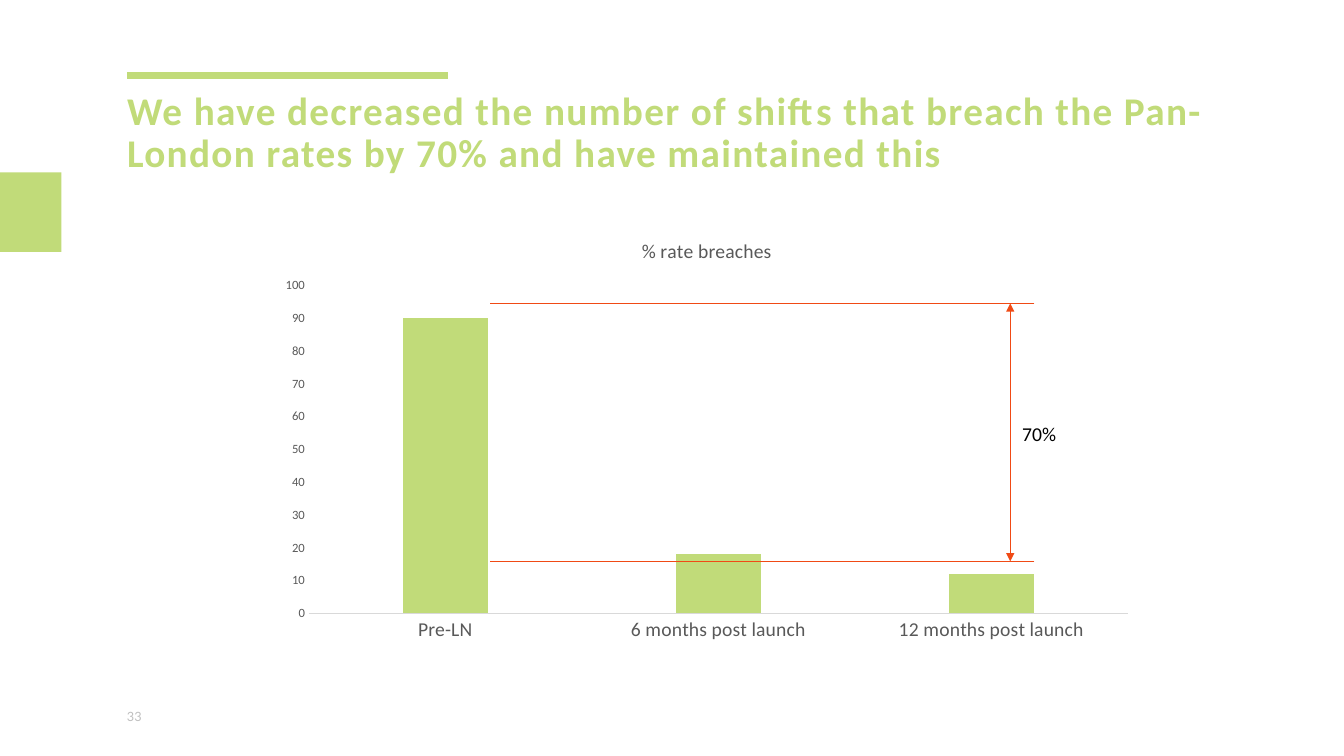
from lxml import etree
from pptx import Presentation
from pptx.chart.data import CategoryChartData
from pptx.dml.color import RGBColor
from pptx.enum.chart import XL_CHART_TYPE, XL_TICK_MARK
from pptx.enum.shapes import MSO_CONNECTOR, MSO_SHAPE
from pptx.enum.text import MSO_AUTO_SIZE
from pptx.oxml.ns import qn
from pptx.util import Inches, Pt

COLUMNS = XL_CHART_TYPE.COLUMN_CLUSTERED
NO_TICKS = XL_TICK_MARK.NONE
STRAIGHT = MSO_CONNECTOR.STRAIGHT
RECTANGLE = MSO_SHAPE.RECTANGLE
GROW = MSO_AUTO_SIZE.SHAPE_TO_FIT_TEXT
FIXED = MSO_AUTO_SIZE.NONE

GREEN, ORANGE, GREY = "C1DB79", "F04A15", "595959"
BREACHES = {"Pre-LN": 90, "6 months post launch": 18, "12 months post launch": 12}
MEASURE = "% rate breaches"


def color(value):
    """Turn a hex string into a colour."""
    return RGBColor.from_string(value)


def set_font(font, size, ink, face="Calibri", bold=False):
    """Apply size, colour, face and weight to a font."""
    formats = {"size": Pt(size), "name": face, "bold": bold}
    for key, value in formats.items():
        setattr(font, key, value)
    font.color.rgb = color(ink)


def add_text(slide, box, words, size, ink, face="Calibri", bold=False,
             wrap=True, auto_size=GROW, left=0.1, right=0.1):
    """Place one paragraph of text in a box and return it."""
    frame = slide.shapes.add_textbox(*map(Inches, box)).text_frame
    formats = {"word_wrap": wrap, "auto_size": auto_size,
               "margin_left": Inches(left), "margin_right": Inches(right),
               "margin_top": Inches(0.05), "margin_bottom": Inches(0.05)}
    for key, value in formats.items():
        setattr(frame, key, value)
    paragraph = frame.paragraphs[0]
    run = paragraph.add_run()
    run.text = words
    set_font(run.font, size, ink, face, bold)
    return paragraph


def add_line(slide, start, end, ink, width, arrows=False):
    """Draw a straight line, with arrowheads at both ends if asked."""
    line = slide.shapes.add_connector(STRAIGHT, *map(Inches, (*start, *end)))
    line.line.color.rgb = color(ink)
    line.line.width = Pt(width)
    properties = line._element.spPr
    if arrows:
        outline = properties.find(qn("a:ln"))
        for tip in ("a:headEnd", "a:tailEnd"):
            etree.SubElement(outline, qn(tip), type="triangle")
    etree.SubElement(properties, qn("a:effectLst"))


def add_frame(slide, left):
    """Draw the page number, the rule above the title and the side tab."""
    add_text(slide, (left, 6.98, 3.3, 0.24), "33", 9.1, "BFBFBF", "Lato",
             auto_size=FIXED, left=0)
    add_line(slide, (left, 0.75), (left + 3.18, 0.75), GREEN, 5)
    tab = slide.shapes.add_shape(RECTANGLE, *map(Inches, (0, 1.71, 0.61, 0.79)))
    tab.shadow.inherit = False
    tab.fill.solid()
    tab.fill.fore_color.rgb = color(GREEN)
    tab.line.fill.background()


def add_headline(slide, box):
    """Write the letter-spaced headline."""
    headline = add_text(
        slide, box,
        "We have decreased the number of shifts that breach the "
        "Pan-London rates by 70% and have maintained this",
        28, GREEN, bold=True, left=0, right=0)
    headline.line_spacing = 0.9
    headline.runs[0].font._element.set("spc", "100")


def add_breach_chart(slide, box):
    """Chart the rate breaches before and after launch."""
    data = CategoryChartData()
    data.categories = list(BREACHES)
    data.add_series(MEASURE, list(BREACHES.values()))
    chart = slide.shapes.add_chart(COLUMNS, *map(Inches, box), data).chart
    set_font(chart.font, 10, "000000")
    chart.has_legend = False
    chart.has_title = True
    heading = chart.chart_title.text_frame
    heading.text = MEASURE
    set_font(heading.paragraphs[0].runs[0].font, 14, GREY)
    chart.chart_title.include_in_layout = False

    periods, rates = chart.category_axis, chart.value_axis
    for axis, size in ((periods, 14), (rates, 9)):
        formats = {"major_tick_mark": NO_TICKS, "minor_tick_mark": NO_TICKS,
                   "has_major_gridlines": False}
        for key, value in formats.items():
            setattr(axis, key, value)
        set_font(axis.tick_labels.font, size, GREY)
    periods.format.line.color.rgb = color("D9D9D9")
    periods.format.line.width = Pt(0.75)
    rates.format.line.fill.background()
    scale = {"minimum_scale": 0, "maximum_scale": 100, "major_unit": 10}
    for key, value in scale.items():
        setattr(rates, key, value)

    plot = chart.plots[0]
    formats = {"gap_width": 219, "overlap": -27, "vary_by_categories": False}
    for key, value in formats.items():
        setattr(plot, key, value)
    fill = plot.series[0].format.fill
    fill.solid()
    fill.fore_color.rgb = color(GREEN)


def add_decrease(slide, box):
    """Mark the decrease between two levels with a double arrow."""
    left, top, width, height = box
    right, bottom = left + width, top + height
    arrow = right - 0.24
    add_line(slide, (right, bottom), (left, bottom), ORANGE, 0.5)
    add_line(slide, (arrow, bottom), (arrow, top), ORANGE, 0.5, arrows=True)
    add_line(slide, (right, top), (left, top), ORANGE, 0.5)
    add_text(slide, (arrow + 0.02, top + 1.13, 0.54, 0.34), "70%", 14,
             "000000", wrap=False)


def main():
    """Build and save the slide."""
    deck = Presentation()
    deck.slide_width, deck.slide_height = Inches(13.33), Inches(7.5)
    slide = deck.slides.add_slide(deck.slide_layouts[6])
    add_frame(slide, 1.26)
    add_headline(slide, (1.26, 0.86, 10.92, 0.95))
    add_breach_chart(slide, (2.66, 2.18, 8.7, 4.27))
    add_decrease(slide, (4.86, 3.01, 5.4, 2.56))
    deck.save("out.pptx")


if __name__ == "__main__":
    main()
